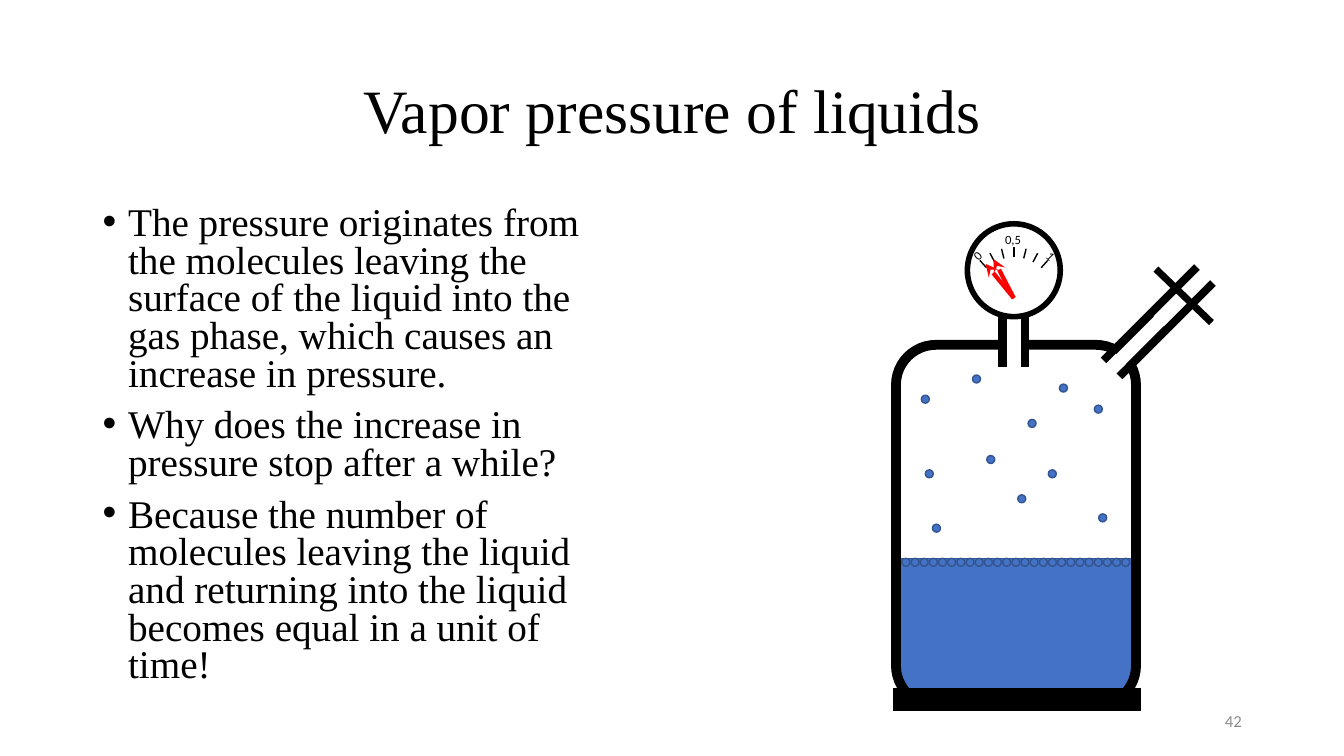
import math

import pptx
import pptx.dml.color
import pptx.enum.shapes
import pptx.enum.text
import pptx.oxml.ns
import pptx.util
from lxml import etree

Cm, Pt = pptx.util.Cm, pptx.util.Pt
KINDS = pptx.enum.shapes.MSO_SHAPE
ALIGN = pptx.enum.text.PP_ALIGN
MIDDLE = pptx.enum.text.MSO_ANCHOR.MIDDLE
BLACK, WHITE, RED = "000000", "FFFFFF", "FF0000"
WATER, EDGE, GREY = "4472C4", "325491", "8C8C8C"
SERIF, SANS = "Times New Roman", "Calibri"

POINTS = [
    "The pressure originates from the molecules leaving the surface of the "
    "liquid into the gas phase, which causes an increase in pressure.",
    "Why does the increase in pressure stop after a while?",
    "Because the number of molecules leaving the liquid and returning into "
    "the liquid becomes equal in a unit of time!",
]
VAPOR = [(0.82, 6.2), (0.72, 4.32), (1, 7.57), (3.15, 6.83), (5.08, 4.57),
         (2.01, 3.81), (3.92, 6.2), (5.19, 7.31), (3.41, 4.93),
         (2.37, 5.84), (4.2, 4.04)]
DROP = 0.2


def color(code):
    return pptx.dml.color.RGBColor.from_string(code)


def add_sub(parent, tag, **attrs):
    return etree.SubElement(parent, pptx.oxml.ns.qn(tag), **attrs)


def add_form(slide, kind, box, fill, line, width, turn=0):
    """Add a preset shape with sharp line corners."""
    form = slide.shapes.add_shape(kind, *map(Cm, box))
    form.shadow.inherit = False
    if fill:
        form.fill.solid()
        form.fill.fore_color.rgb = color(fill)
    else:
        form.fill.background()
    form.line.color.rgb = color(line)
    form.line.width = Pt(width)
    add_sub(form.line._get_or_add_ln(), "a:miter", lim="800000")
    form.rotation = turn


def add_line(slide, start, end, line, width, arrow=False):
    link = slide.shapes.add_connector(
        pptx.enum.shapes.MSO_CONNECTOR.STRAIGHT, *map(Cm, (*start, *end)))
    link.line.color.rgb = color(line)
    link.line.width = Pt(width)
    if arrow:
        add_sub(link.line._get_or_add_ln(), "a:tailEnd", type="stealth")
    add_sub(link._element.spPr, "a:effectLst")


def add_text(slide, box, lines, size, font, align, ink=BLACK):
    """Add a text box with one paragraph per line and return it."""
    area = slide.shapes.add_textbox(*map(Cm, box))
    frame = area.text_frame
    frame.word_wrap = True
    frame.text = "\n".join(lines)
    for para in frame.paragraphs:
        para.alignment = align
        para.font.size = Pt(size)
        para.font.name = font
        para.font.color.rgb = color(ink)
    return area


def add_title(slide, box):
    frame = add_text(slide, box, ["Vapor pressure of liquids"], 44, SERIF,
                     ALIGN.CENTER).text_frame
    frame.vertical_anchor = MIDDLE
    frame.paragraphs[0].line_spacing = 0.9


def add_points(slide, box):
    area = add_text(slide, box, POINTS, 28, SERIF, ALIGN.LEFT)
    for para in area.text_frame.paragraphs:
        para.line_spacing = 0.8
        para.space_before = Pt(10)
        props = para._p.get_or_add_pPr()
        props.set("marL", str(Cm(0.64)))
        props.set("indent", str(-Cm(0.64)))
        add_sub(props, "a:buFont", typeface="Arial")
        add_sub(props, "a:buChar", char="•")


def add_number(slide, box):
    area = add_text(slide, box, ["42"], 12, SANS, ALIGN.RIGHT, GREY)
    area.text_frame.vertical_anchor = MIDDLE


def add_gauge(slide, box):
    """Draw the dial with its scale and two needles."""
    left, top, wide, high = box
    add_form(slide, KINDS.OVAL, box, WHITE, BLACK, 4)
    hub = left + wide / 2, top + 0.8 * high

    def on_dial(angle, radius):
        turn = math.radians(angle)
        return (hub[0] + radius * math.sin(turn),
                hub[1] - radius * math.cos(turn))

    for angle in range(-42, 43, 14):
        add_line(slide, on_dial(angle, 1.28), on_dial(angle, 1.03), BLACK, 1)
    for mark, x, y, turn in (("1", 2.1, 0.82, 45), ("0", 0.25, 0.8, 315),
                             ("0,5", 1.15, 0.39, 0)):
        spot = left + x - 0.45, top + y - 0.32, 0.9, 0.64
        label = add_text(slide, spot, [mark], 9, SANS, ALIGN.CENTER)
        label.rotation = turn
        label.text_frame.margin_left = label.text_frame.margin_right = 0
    for x, y in ((0.46, 1.01), (0.66, 0.89)):
        add_line(slide, hub, (left + x, top + y), RED, 3, arrow=True)


def add_vessel(slide, box):
    """Draw the bottle with liquid, vapor, side pipe and gauge."""
    left, top, wide, high = box

    def place(x, y, *size):
        return (left + x, top + y, *size)

    add_form(slide, KINDS.RECTANGLE, place(0.13, 8.43, 5.89, 3.58),
             WATER, EDGE, 1)
    add_form(slide, KINDS.ROUNDED_RECTANGLE, place(0.08, 3.05, 6.05, 9.09),
             None, BLACK, 7)
    neck, pipe = (2.77, 1.75, 0.56, 1.75), (6.41, 0.91, 0.56, 3.12)
    for part, turn in ((neck, 0), (pipe, 45)):
        add_form(slide, KINDS.RECTANGLE, place(*part), WHITE, BLACK, 6, turn)
    add_line(slide, place(0, high), place(wide, high), BLACK, 16)
    for x, y, turn in ((4.98, 3.22, 45), (7.32, 0.89, 45), (2.98, 3.35, 0)):
        add_form(slide, KINDS.RECTANGLE, place(x, y, 0.15, 1.75),
                 WHITE, WHITE, 6, turn)
    add_line(slide, place(6.63, 1.14), place(8.03, 2.49), BLACK, 5)

    surface = [(0.23 + 5.54 * i / 24, 8.43) for i in range(25)]
    for x, y in surface + VAPOR:
        add_form(slide, KINDS.OVAL, place(x, y, DROP, DROP), WATER, EDGE, 1)
    add_gauge(slide, place(1.88, 0, 2.34, 2.34))


def main():
    deck = pptx.Presentation()
    deck.slide_width, deck.slide_height = Cm(33.87), Cm(19.05)
    slide = deck.slides.add_slide(deck.slide_layouts[6])
    add_title(slide, (2.34, 1.02, 29.21, 3.68))
    add_points(slide, (2.34, 5.08, 13.56, 13.36))
    add_vessel(slide, (22.5, 5.64, 6.25, 11.99))
    add_number(slide, (23.93, 17.65, 7.62, 1.02))
    deck.save("out.pptx")


if __name__ == "__main__":
    main()
